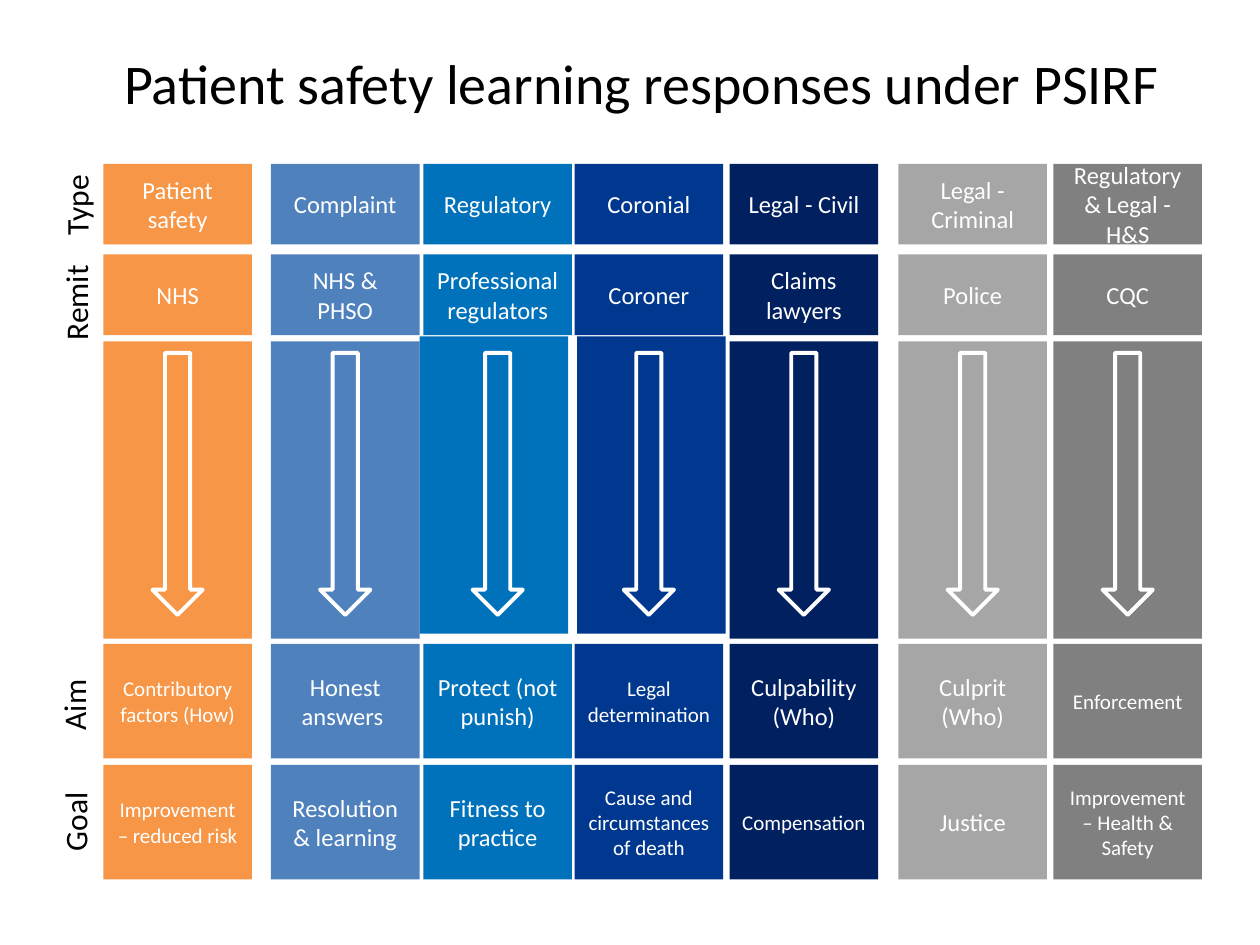
from dataclasses import dataclass

from pptx import Presentation
from pptx import util as u
from pptx.dml.color import RGBColor
from pptx.enum import shapes, text

FONT = "Calibri"
WHITE = RGBColor(0xFF, 0xFF, 0xFF)
BLACK = RGBColor(0x00, 0x00, 0x00)
ORANGE = RGBColor(0xF7, 0x96, 0x46)
STEEL = RGBColor(0x4F, 0x81, 0xBD)
BLUE = RGBColor(0x00, 0x72, 0xBB)
ROYAL = RGBColor(0x00, 0x38, 0x8F)
NAVY = RGBColor(0x00, 0x20, 0x60)
SILVER = RGBColor(0xA6, 0xA6, 0xA6)
GREY = RGBColor(0x80, 0x80, 0x80)

WIDE = 1.18
PANEL_TOP, PANEL_HIGH = 2.71, 2.36
ARROW_TOP, ARROW_WIDE, ARROW_HIGH = 2.8, 0.4, 2.08


@dataclass
class Cell:
    words: str
    size: int = 14


@dataclass
class Column:
    left: float
    color: RGBColor
    cells: tuple[Cell, ...]
    shift: tuple[float, float] = (0, 0)  # offset of the arrow panel


@dataclass
class Row:
    top: float
    high: float


@dataclass
class Label:
    words: str
    left: float
    top: float
    wide: float


COLUMNS = (
    Column(0.82, ORANGE, (
        Cell("Patient safety"), Cell("NHS"),
        Cell("Contributory factors (How)", 12), Cell("Improvement – reduced risk", 12))),
    Column(2.15, STEEL, (
        Cell("Complaint"), Cell("NHS & PHSO"),
        Cell("Honest answers "), Cell("Resolution & learning"))),
    Column(3.36, BLUE, (
        Cell("Regulatory"), Cell("Professional regulators"),
        Cell("Protect (not punish)"), Cell("Fitness to practice")), (-0.03, -0.04)),
    Column(4.56, ROYAL, (
        Cell("Coronial"), Cell("Coroner"),
        Cell("Legal determination ", 12), Cell("Cause and circumstances of death", 12)),
        (0.02, -0.04)),
    Column(5.79, NAVY, (
        Cell("Legal - Civil"), Cell("Claims lawyers"),
        Cell("Culpability (Who)"), Cell("Compensation", 12))),
    Column(7.13, SILVER, (
        Cell("Legal - Criminal"), Cell("Police"),
        Cell("Culprit (Who)"), Cell("Justice"))),
    Column(8.36, GREY, (
        Cell("Regulatory & Legal - H&S"), Cell("CQC"),
        Cell("Enforcement", 12), Cell("Improvement – Health & Safety", 12))),
)
ROWS = (Row(1.3, 0.64), Row(2.02, 0.64), Row(5.11, 0.91), Row(6.07, 0.91))
LABELS = (
    Label("Type", 0.26, 1.42, 0.69),
    Label("Remit", 0.2, 2.2, 0.8),
    Label("Aim", 0.28, 5.39, 0.61),
    Label("Goal", 0.26, 6.32, 0.67),
)


def write(shape, words: str, size: int, color: RGBColor, align=None) -> None:
    shape.text_frame.text = words
    para = shape.text_frame.paragraphs[0]
    para.alignment = align
    font = para.runs[0].font
    font.name, font.size, font.color.rgb = FONT, u.Pt(size), color


def add_block(slide, left: float, top: float, high: float, color: RGBColor):
    block = slide.shapes.add_shape(
        shapes.MSO_SHAPE.RECTANGLE,
        u.Inches(left), u.Inches(top), u.Inches(WIDE), u.Inches(high))
    block.shadow.inherit = False
    block.fill.solid()
    block.fill.fore_color.rgb = color
    block.line.fill.background()
    return block


def add_cell(slide, column: Column, row: Row, cell: Cell) -> None:
    block = add_block(slide, column.left, row.top, row.high, column.color)
    block.text_frame.word_wrap = True
    block.text_frame.vertical_anchor = text.MSO_ANCHOR.MIDDLE
    write(block, cell.words, cell.size, WHITE, text.PP_ALIGN.CENTER)


def add_panel(slide, column: Column) -> None:
    across, down = column.shift
    add_block(slide, column.left + across, PANEL_TOP + down, PANEL_HIGH, column.color)


def add_arrow(slide, column: Column) -> None:
    left = column.left + (WIDE - ARROW_WIDE) / 2
    arrow = slide.shapes.add_shape(
        shapes.MSO_SHAPE.DOWN_ARROW, u.Inches(left), u.Inches(ARROW_TOP),
        u.Inches(ARROW_WIDE), u.Inches(ARROW_HIGH))
    arrow.shadow.inherit = False
    arrow.fill.background()
    arrow.line.color.rgb = WHITE
    arrow.line.width = u.Pt(2.25)


def add_label(slide, label: Label) -> None:
    box = slide.shapes.add_textbox(
        u.Inches(label.left), u.Inches(label.top), u.Inches(label.wide), u.Inches(0.4))
    box.rotation = 270
    box.text_frame.word_wrap = False
    box.text_frame.auto_size = text.MSO_AUTO_SIZE.SHAPE_TO_FIT_TEXT
    write(box, label.words, 18, BLACK)


def add_title(slide, words: str) -> None:
    box = slide.shapes.add_textbox(
        u.Inches(0.73), u.Inches(0.32), u.Inches(8.73), u.Inches(0.67))
    box.text_frame.word_wrap = True
    box.text_frame.vertical_anchor = text.MSO_ANCHOR.MIDDLE
    write(box, words, 32, BLACK, text.PP_ALIGN.CENTER)


def main() -> None:
    deck = Presentation()
    deck.slide_width, deck.slide_height = u.Inches(10), u.Inches(7.5)
    slide = deck.slides.add_slide(deck.slide_layouts[6])
    for i, row in enumerate(ROWS):
        for column in COLUMNS:
            add_cell(slide, column, row, column.cells[i])
    for column in COLUMNS:
        add_panel(slide, column)
    for column in COLUMNS:
        add_arrow(slide, column)
    for label in LABELS:
        add_label(slide, label)
    add_title(slide, "Patient safety learning responses under PSIRF")
    deck.save("out.pptx")


if __name__ == "__main__":
    main()
